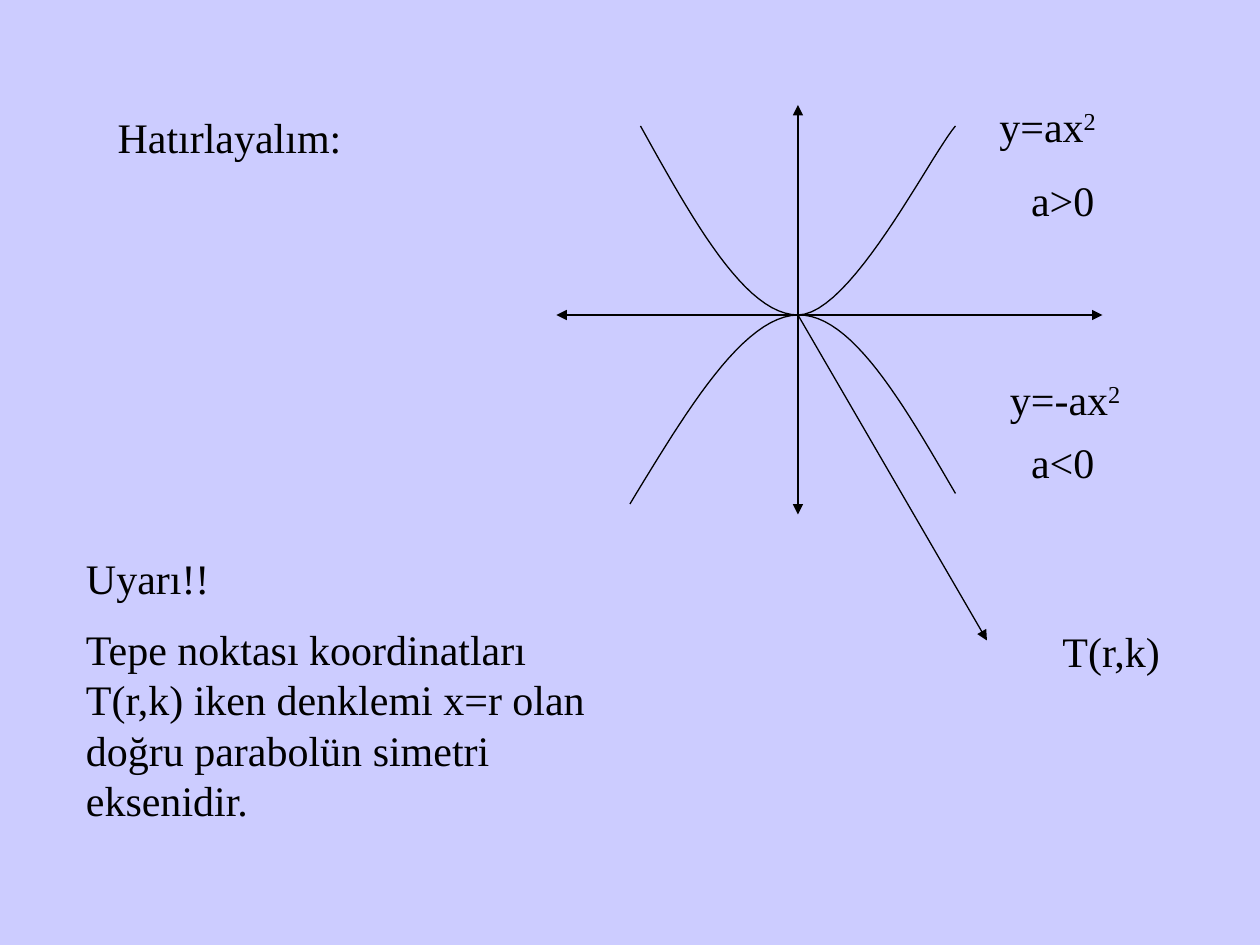
import pptx
import pptx.util
import pptx.dml.color
import pptx.enum.shapes
import pptx.enum.text
import pptx.oxml.ns
from lxml import etree

COLORS = {"background": "CCCCFF", "ink": "000000"}
FONT = "Times New Roman"
STEPS = 24

prs = pptx.Presentation()
prs.slide_width = pptx.util.Inches(10)
prs.slide_height = pptx.util.Inches(7.5)
UNIT = prs.slide_width // 120
ink = pptx.dml.color.RGBColor.from_string(COLORS["ink"])

s = prs.slides.add_slide(prs.slide_layouts[5])
s.background.fill.solid()
s.background.fill.fore_color.rgb = pptx.dml.color.RGBColor.from_string(COLORS["background"])


def write(text, *, sp=None, col=0, row=0, cols=12, rows=6, indent=0, size=24):
    box = [round(v * UNIT) for v in (col, row, cols, rows)]
    if sp is None:
        sp = s.shapes.add_textbox(*box)
    sp.left, sp.top, sp.width, sp.height = box
    tf = sp.text_frame
    tf.word_wrap = True
    tf.auto_size = pptx.enum.text.MSO_AUTO_SIZE.NONE
    tf.vertical_anchor = pptx.enum.text.MSO_ANCHOR.TOP
    tf.margin_left = pptx.util.Inches(0.1) + indent * UNIT
    for i, line in enumerate(text.split("\n")):
        p = tf.paragraphs[0] if i == 0 else tf.add_paragraph()
        p.alignment = pptx.enum.text.PP_ALIGN.LEFT
        p.space_before = pptx.util.Pt(size / 2 if i else 0)
        for j, part in enumerate(line.split("^")):
            r = p.add_run()
            r.text = part
            r.font.name = FONT
            r.font.size = pptx.util.Pt(size)
            r.font.color.rgb = ink
            if j:
                r.font._element.set("baseline", "30000")


arrows = [
    (76, 13, 76, 49),
    (54, 30, 105, 30),
    (76, 15, 76, 10),
    (58, 30, 53, 30),
    (76, 30, 94, 61),
]
for arrow in arrows:
    sp = s.shapes.add_connector(
        pptx.enum.shapes.MSO_CONNECTOR.STRAIGHT, *[v * UNIT for v in arrow]
    )
    sp.line.color.rgb = ink
    sp.line.width = pptx.util.Pt(0.75)
    tail = etree.SubElement(sp.line._get_or_add_ln(), pptx.oxml.ns.qn("a:tailEnd"))
    tail.set("type", "triangle")
    etree.SubElement(sp._element.spPr, pptx.oxml.ns.qn("a:effectLst"))

parabolas = [
    [(61, 12), (66, 21), (71, 30), (76, 30), (81, 30), (88.5, 15), (91, 12)],
    [(60, 48), (65.4, 39.1), (70.8, 30.1), (76, 30), (81.1, 29.9), (86, 38.4), (91, 47)],
]
for controls in parabolas:
    points = []
    for k in (0, 3):
        for i in range(1, STEPS + 1):
            t = i / STEPS
            weights = ((1 - t) ** 3, 3 * t * (1 - t) ** 2, 3 * t**2 * (1 - t), t**3)
            points.append(
                [sum(w * c[a] for w, c in zip(weights, controls[k:k + 4])) * UNIT for a in (0, 1)]
            )
    start_x, start_y = controls[0]
    builder = s.shapes.build_freeform(start_x * UNIT, start_y * UNIT)
    builder.add_line_segments(points, close=False)
    sp = builder.convert_to_shape()
    sp.shadow.inherit = False
    sp.fill.background()
    sp.line.color.rgb = ink
    sp.line.width = pptx.util.Pt(0.75)

write("Hatırlayalım:", sp=s.shapes.title, col=10, row=10, cols=26)
write("y=ax^2", col=94, row=9, cols=22)
write("a>0", col=94, row=16, cols=14, indent=3)
write("y=-ax^2", col=95, row=35, cols=16)
write("a<0", col=95, row=41, indent=2)
write("T(r,k)", col=100, row=59, cols=15)
write(
    "Uyarı!!\nTepe noktası koordinatları T(r,k) iken denklemi x=r olan "
    "doğru parabolün simetri eksenidir.",
    col=7, row=52, cols=52, rows=27.6,
)

prs.save("out.pptx")
